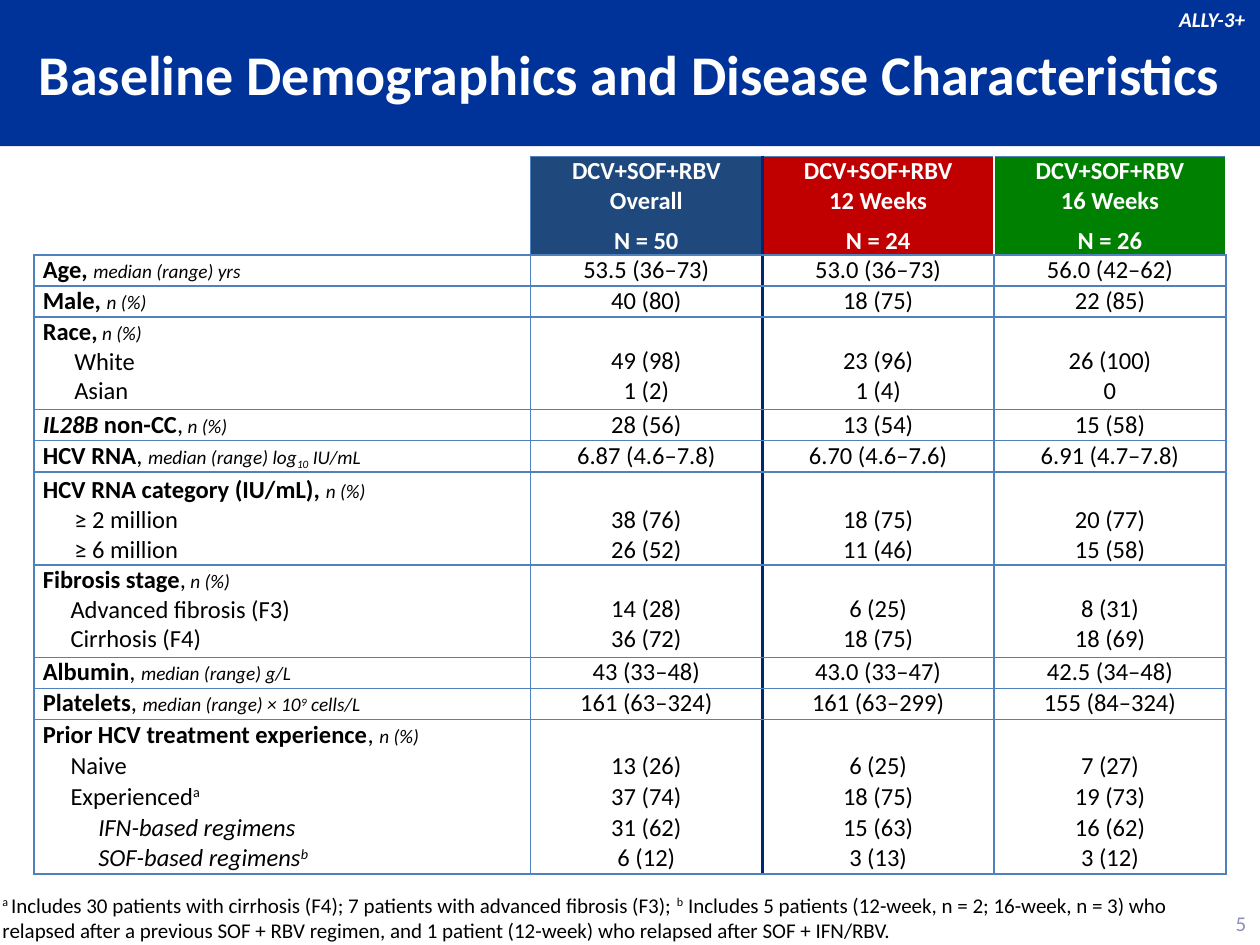
from dataclasses import dataclass

from lxml import etree
from pptx import Presentation
from pptx.dml.color import RGBColor
from pptx.enum.shapes import MSO_SHAPE
from pptx.enum.text import MSO_ANCHOR, PP_ALIGN
from pptx.oxml.ns import qn
from pptx.util import Inches, Pt

TOP, MIDDLE, BOTTOM = MSO_ANCHOR.TOP, MSO_ANCHOR.MIDDLE, MSO_ANCHOR.BOTTOM
LEFT, CENTER, RIGHT = PP_ALIGN.LEFT, PP_ALIGN.CENTER, PP_ALIGN.RIGHT
RECTANGLE = MSO_SHAPE.RECTANGLE


@dataclass(frozen=True)
class Theme:
    font: str = "Calibri"
    white: str = "FFFFFF"
    black: str = "000000"
    banner: str = "003399"
    grid: str = "4F81BD"
    divider: str = "002673"
    page_number: str = "8C90BA"
    title_size: float = 32
    table_size: float = 14
    unit_size: float = 11
    note_size: float = 12
    grid_width: float = 1
    divider_width: float = 2.25


@dataclass(frozen=True)
class Piece:
    text: str
    size: float
    bold: bool = False
    italic: bool = False
    baseline: int = 0


@dataclass(frozen=True)
class Line:
    pieces: list[Piece]
    indent: float = 0


@dataclass(frozen=True)
class Arm:
    heading: str
    count: str
    color: str


@dataclass(frozen=True)
class Characteristic:
    label: list[Line]
    stats: list[str]
    anchor: MSO_ANCHOR = MIDDLE
    top_rule: bool = True


THEME = Theme()


def bold(text: str, italic: bool = False) -> Piece:
    return Piece(text, THEME.table_size, bold=True, italic=italic)


def plain(text: str, italic: bool = False, baseline: int = 0) -> Piece:
    return Piece(text, THEME.table_size, italic=italic, baseline=baseline)


def unit(text: str, baseline: int = 0) -> Piece:
    return Piece(text, THEME.unit_size, italic=True, baseline=baseline)


def note(text: str, baseline: int = 0) -> Piece:
    return Piece(text, THEME.note_size, baseline=baseline)


ARMS = [
    Arm("DCV+SOF+RBV\vOverall", "N = 50", "1F497D"),
    Arm("DCV+SOF+RBV\v12 Weeks", "N = 24", "C00000"),
    Arm("DCV+SOF+RBV\v16 Weeks", "N = 26", "008000"),
]

CHARACTERISTICS = [
    Characteristic([Line([bold("Age, "), unit("median (range) yrs")])],
                   ["53.5 (36–73)", "53.0 (36–73)", "56.0 (42–62)"]),
    Characteristic([Line([bold("Male, "), unit("n (%)")])], ["40 (80)", "18 (75)", "22 (85)"]),
    Characteristic([Line([bold("Race,"), unit(" n (%)")]),
                    Line([plain("White")], 0.25), Line([plain("Asian")], 0.25)],
                   ["49 (98)\n1 (2)", "23 (96)\n1 (4)", "26 (100)\n0"], TOP),
    Characteristic([Line([bold("IL28B", italic=True), bold(" non-CC"), plain(","), unit(" n (%)")])],
                   ["28 (56)", "13 (54)", "15 (58)"]),
    Characteristic([Line([bold("HCV RNA"), plain(", "), unit("median (range) log"),
                          unit("10", -25), unit(" IU/mL")])],
                   ["6.87 (4.6–7.8)", "6.70 (4.6–7.6)", "6.91 (4.7–7.8)"]),
    Characteristic([Line([bold("HCV RNA category (IU/mL), "), unit("n (%)")]),
                    Line([plain("≥ 2 million")], 0.25), Line([plain("≥ 6 million")], 0.25)],
                   ["38 (76)\n26 (52)", "18 (75)\n11 (46)", "20 (77)\n15 (58)"], BOTTOM),
    Characteristic([Line([bold("Fibrosis stage"), plain(","), unit(" n (%)")]),
                    Line([plain("Advanced fibrosis (F3)")], 0.22),
                    Line([plain("Cirrhosis (F4)")], 0.22)],
                   ["14 (28)\n36 (72)", "6 (25)\n18 (75)", "8 (31)\n18 (69)"], TOP),
    Characteristic([Line([bold("Albumin"), plain(", "), unit("median (range) g/L")])],
                   ["43 (33–48)", "43.0 (33–47)", "42.5 (34–48)"], TOP),
    Characteristic([Line([bold("Platelets"), plain(", "), unit("median (range) × 10"),
                          unit("9", 30), unit(" cells/L")])],
                   ["161 (63–324)", "161 (63–299)", "155 (84–324)"], TOP),
    Characteristic([Line([bold("Prior HCV treatment experience"), plain(", "), unit("n (%)")])],
                   ["", "", ""]),
    Characteristic([Line([plain("Naive")], 0.22)], ["13 (26)", "6 (25)", "7 (27)"], top_rule=False),
    Characteristic([Line([plain("Experienced"), plain("a", baseline=30)], 0.22)],
                   ["37 (74)", "18 (75)", "19 (73)"], top_rule=False),
    Characteristic([Line([plain("IFN-based regimens", italic=True)], 0.44)],
                   ["31 (62)", "15 (63)", "16 (62)"], top_rule=False),
    Characteristic([Line([plain("SOF-based regimens", italic=True),
                          plain("b", italic=True, baseline=30)], 0.44)],
                   ["6 (12)", "3 (13)", "3 (12)"], top_rule=False),
]

FOOTNOTE = Line([
    note("a ", 30),
    note("Includes 30 patients with cirrhosis (F4); 7 patients with advanced fibrosis (F3); "),
    note("b", 30),
    note(" Includes 5 patients (12-week, n = 2; 16-week, n = 3) who \v"
         "relapsed after a previous SOF + RBV regimen, and 1 patient (12-week) "
         "who relapsed after SOF + IFN/RBV."),
])


def write_lines(frame, lines: list[Line], color: str, align=LEFT) -> None:
    for index, line in enumerate(lines):
        paragraph = frame.add_paragraph() if index else frame.paragraphs[0]
        paragraph.alignment = align
        paragraph.font.name = THEME.font
        paragraph.font.color.rgb = RGBColor.from_string(color)
        if line.indent:
            paragraph._p.get_or_add_pPr().set("marL", str(Inches(line.indent)))
        for attribute in ("size", "bold", "italic"):
            values = [getattr(piece, attribute) for piece in line.pieces]
            shared = len(set(values)) == 1
            runs_value = lambda value: Pt(value) if attribute == "size" else value
            if shared:
                setattr(paragraph.font, attribute, runs_value(values[0]))
        for piece in line.pieces:
            if not piece.text:
                etree.SubElement(paragraph._p, qn("a:endParaRPr"), sz=str(piece.size * 100))
                continue
            for part_index, part in enumerate(piece.text.split("\v")):
                if part_index:
                    paragraph.add_line_break()
                run = paragraph.add_run()
                run.text = part
                if paragraph.font.size is None:
                    run.font.size = Pt(piece.size)
                if paragraph.font.bold is None:
                    run.font.bold = piece.bold
                if paragraph.font.italic is None:
                    run.font.italic = piece.italic
                if piece.baseline:
                    run._r.get_or_add_rPr().set("baseline", str(piece.baseline * 1000))


def add_label(slide, box: tuple, line: Line, color: str, align=LEFT, anchor=TOP, inset=None) -> None:
    frame = slide.shapes.add_textbox(*map(Inches, box)).text_frame
    frame.word_wrap = False
    frame.vertical_anchor = anchor
    if inset is not None:
        frame.margin_left = frame.margin_right = frame.margin_top = frame.margin_bottom = Inches(inset)
    write_lines(frame, [line], color, align)


def set_borders(cell, sides: dict) -> None:
    properties = cell._tc.get_or_add_tcPr()
    for index, side in enumerate("LRTB"):
        color, width = sides.get(side) or (None, 0)
        border = etree.Element(qn(f"a:ln{side}"), w=str(Pt(width)))
        if color:
            fill = etree.SubElement(border, qn("a:solidFill"))
            etree.SubElement(fill, qn("a:srgbClr"), val=color)
        else:
            etree.SubElement(border, qn("a:noFill"))
        properties.insert(index, border)


def style_cell(cell, row: int, column: int, anchor) -> None:
    cell.margin_left = cell.margin_right = Inches(0.07)
    cell.margin_top = cell.margin_bottom = 0
    cell.vertical_anchor = anchor
    cell.fill.background()
    grid = (THEME.grid, THEME.grid_width)
    divider = (THEME.divider, THEME.divider_width)
    header_gap = (THEME.white, THEME.grid_width)
    verticals = [grid, grid, divider, grid, grid]
    if row == 0:
        verticals = [None, grid, divider, header_gap, header_gap]
    ruled = [column > 0] + [item.top_rule for item in CHARACTERISTICS] + [True]
    set_borders(cell, {"L": verticals[column], "R": verticals[column + 1],
                       "T": grid if ruled[row] else None,
                       "B": grid if ruled[row + 1] else None})


def add_demographics(slide) -> None:
    header_height, body_height = 0.78, 4.91
    table = slide.shapes.add_table(len(CHARACTERISTICS) + 1, len(ARMS) + 1, Inches(0.27), Inches(1.24),
                                   Inches(9.46), Inches(header_height + body_height)).table
    table.first_row = table.horz_banding = False
    for column, width in zip(table.columns, [3.94] + [1.84] * len(ARMS)):
        column.width = Inches(width)
    line_height = body_height / sum(len(item.label) for item in CHARACTERISTICS)
    table.rows[0].height = Inches(header_height)
    style_cell(table.cell(0, 0), 0, 0, BOTTOM)
    for column, arm in enumerate(ARMS, 1):
        cell = table.cell(0, column)
        style_cell(cell, 0, column, BOTTOM)
        cell.fill.solid()
        cell.fill.fore_color.rgb = RGBColor.from_string(arm.color)
        write_lines(cell.text_frame, [Line([bold(arm.heading)]), Line([bold(arm.count)])],
                    THEME.white, CENTER)
        cell.text_frame.paragraphs[1].space_before = Pt(6)
    for row, item in enumerate(CHARACTERISTICS, 1):
        table.rows[row].height = Inches(line_height * len(item.label))
        for column in range(len(ARMS) + 1):
            cell = table.cell(row, column)
            style_cell(cell, row, column, item.anchor)
            if column == 0:
                write_lines(cell.text_frame, item.label, THEME.black)
                continue
            stats = item.stats[column - 1].split("\n")
            cell.margin_top = Inches(0.235 * (len(item.label) - len(stats)))
            write_lines(cell.text_frame, [Line([plain(stat)]) for stat in stats], THEME.black, CENTER)


def add_banner(slide) -> None:
    banner = slide.shapes.add_shape(RECTANGLE, 0, 0, Inches(10), Inches(1.16))
    banner.shadow.inherit = False
    banner.fill.solid()
    banner.fill.fore_color.rgb = RGBColor.from_string(THEME.banner)
    banner.line.fill.background()
    banner.text_frame.vertical_anchor = MIDDLE
    title = Piece("Baseline Demographics and Disease Characteristics", THEME.title_size, bold=True)
    write_lines(banner.text_frame, [Line([title])], THEME.white, CENTER)


def main() -> None:
    deck = Presentation()
    deck.slide_width, deck.slide_height = Inches(10), Inches(7.5)
    slide = deck.slides.add_slide(deck.slide_layouts[6])
    add_banner(slide)
    study = Piece("ALLY-3+", THEME.note_size, bold=True, italic=True)
    add_label(slide, (9.26, 0, 0.74, 0.3), Line([study]), THEME.white)
    add_demographics(slide)
    add_label(slide, (0.02, 7.08, 9.4, 0.4), FOOTNOTE, THEME.black, anchor=BOTTOM, inset=0)
    add_label(slide, (9.7, 7.18, 0.29, 0.3), Line([note("5")]), THEME.page_number, RIGHT, MIDDLE)
    deck.save("out.pptx")


if __name__ == "__main__":
    main()
